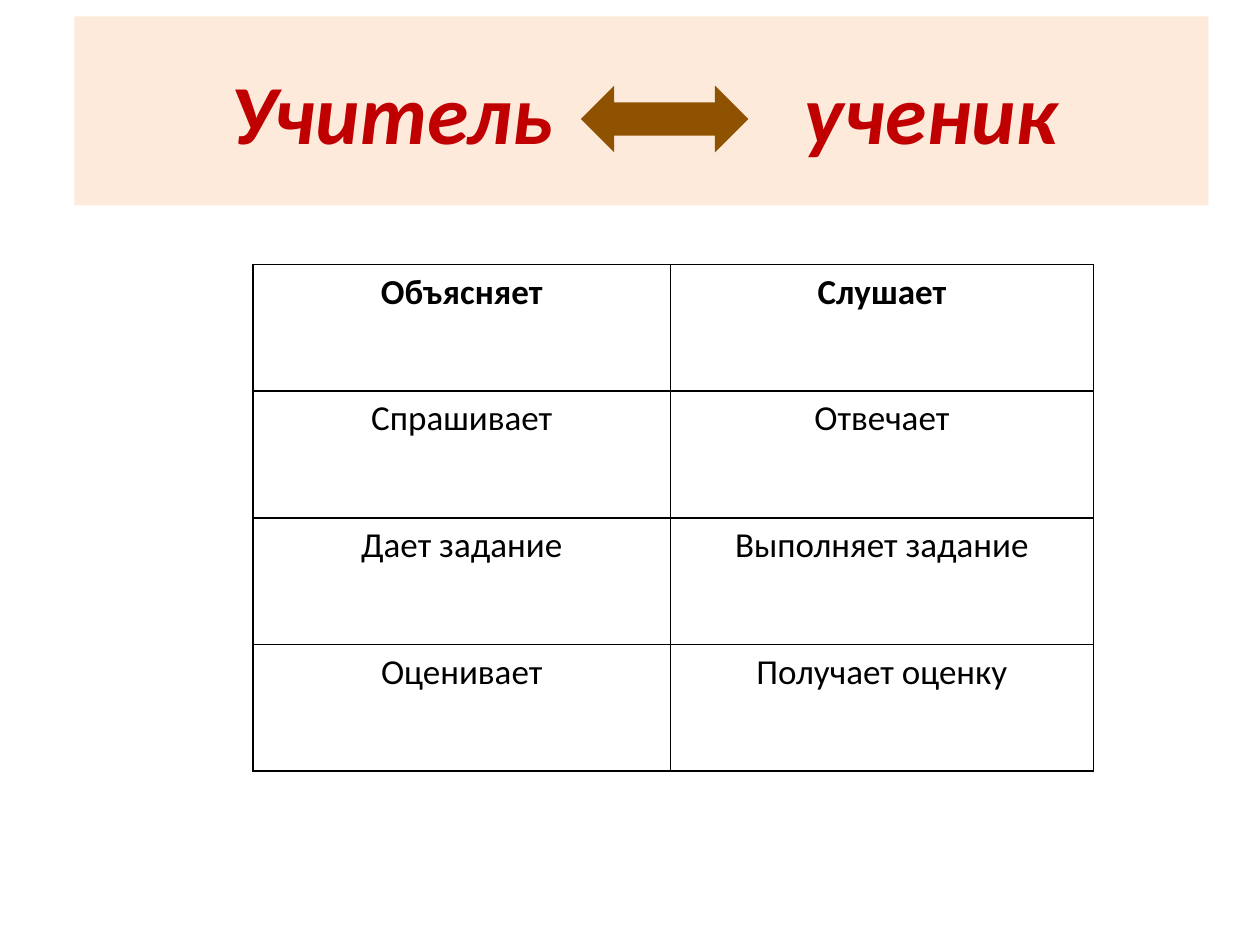
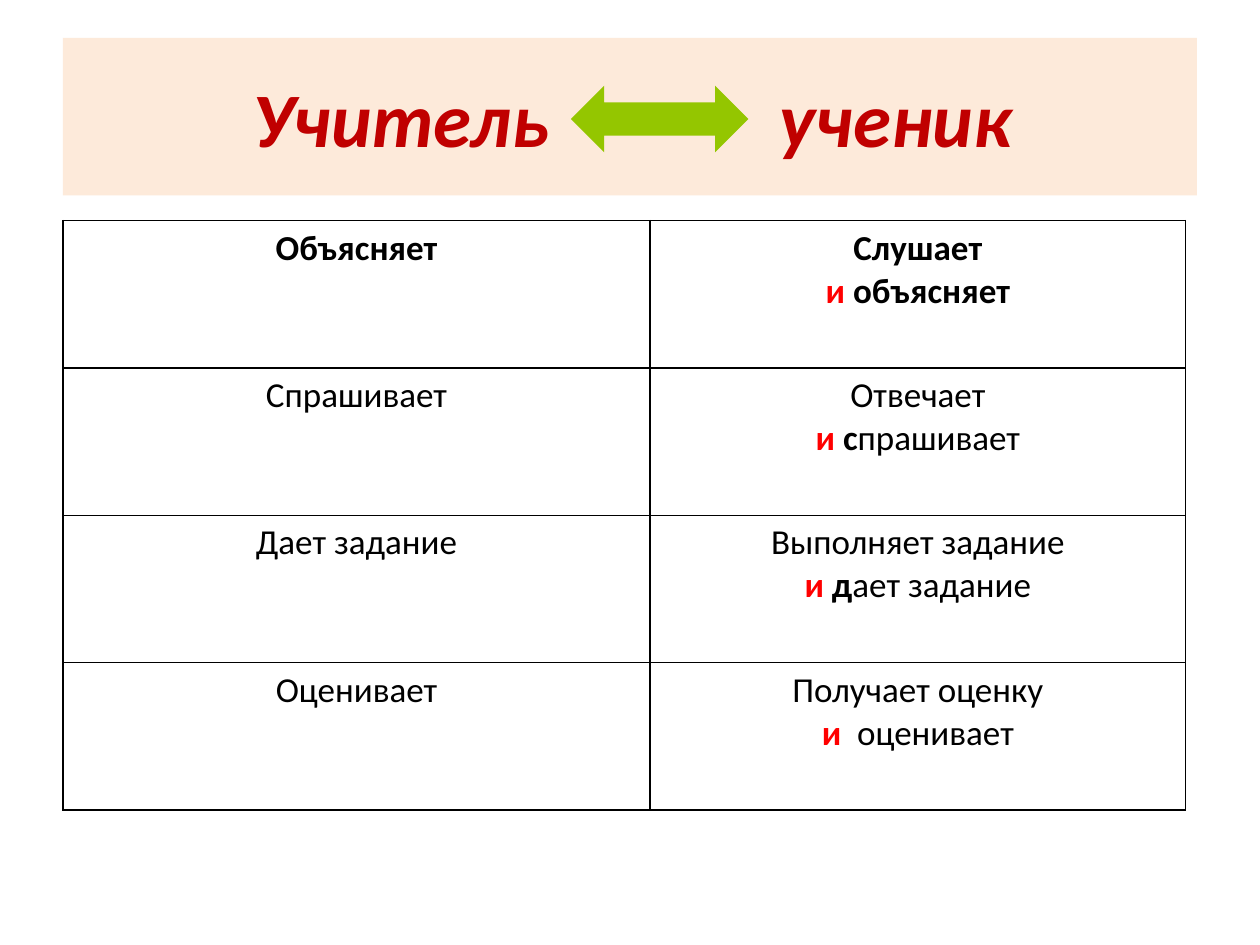
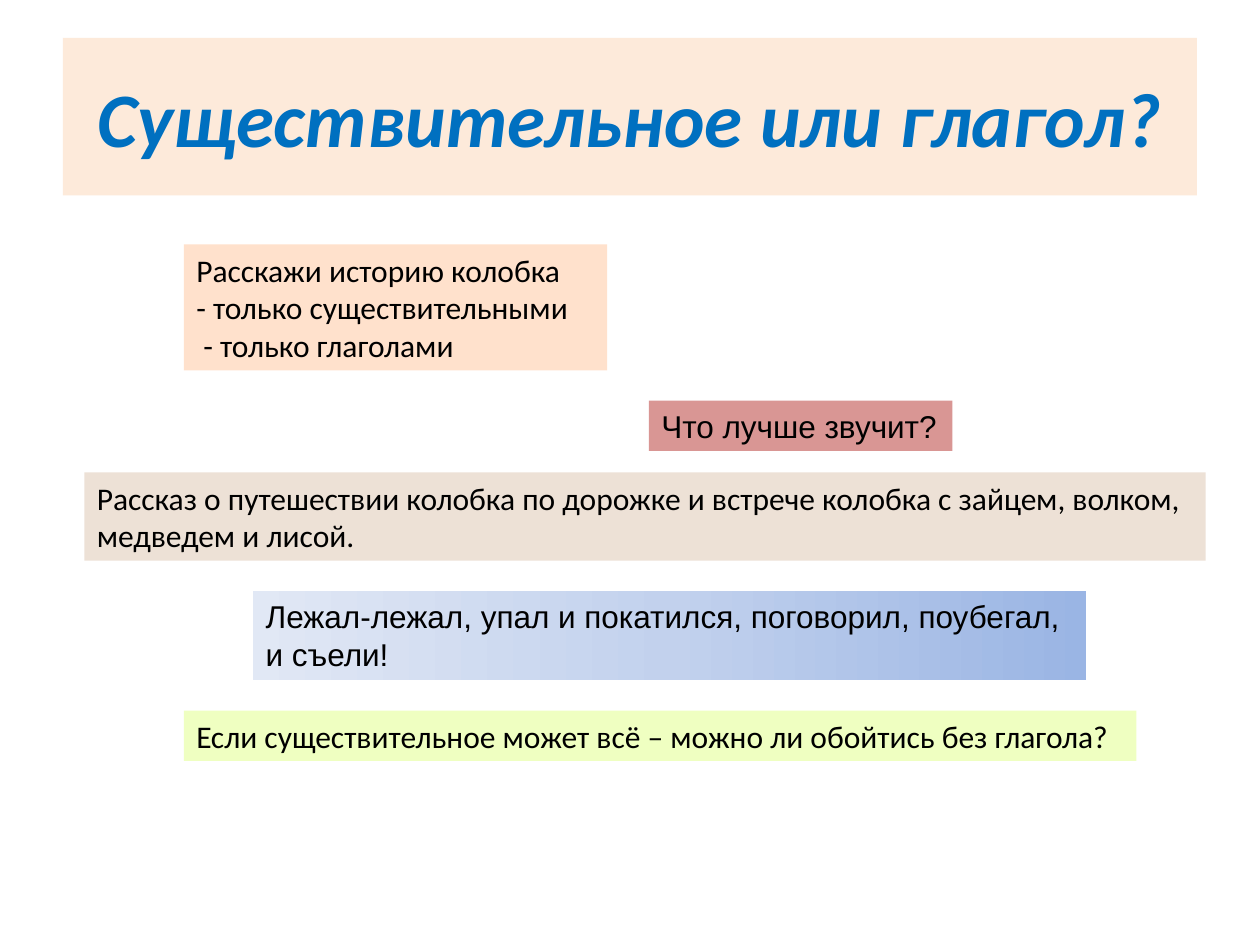
from copy import deepcopy

from lxml import etree
from pptx import Presentation
from pptx.dml.color import RGBColor
from pptx.enum.shapes import MSO_SHAPE
from pptx.enum.text import MSO_ANCHOR, PP_ALIGN
from pptx.oxml.ns import qn
from pptx.util import Inches, Pt

BAND, RED, BLUE, BLACK, ACCENT = "FDEADA", "C00000", "0070C0", "000000", "FF0000"

TEACHER = ["Объясняет", "Спрашивает", "Дает задание", "Оценивает"]
STUDENT = ["Слушает", "Отвечает", "Выполняет задание", "Получает оценку"]

AND = ("и", {"color": ACCENT, "bold": True})
AND_SPACED = ("и ", {"color": ACCENT, "bold": True})
BOLD = {"bold": True}
STUDENT_TOO = [
    [AND, (" объясняет", BOLD)],
    [AND, (" с", BOLD), ("прашивает", {})],
    [AND, (" д", BOLD), ("ает задание", {})],
    [AND_SPACED, (" оценивает", {})],
]

ROLE_SLIDES = [
    {
        "band": (0.59, 0.13, 9, 1.5), "size": 48,
        "arrow": (4.61, 0.68, 1.33, 0.53), "arrow_color": "8F5201",
        "table": (2.01, 2.1, 6.67, 4.02), "columns": (3.31, 3.36),
        "rows": [([teacher], [student]) for teacher, student in zip(TEACHER, STUDENT)],
    },
    {
        "band": (0.5, 0.3, 9, 1.25), "size": 44,
        "arrow": (4.53, 0.68, 1.41, 0.53), "arrow_color": "94C600",
        "table": (0.5, 1.75, 8.91, 4.68), "columns": (4.66, 4.25),
        "rows": [([teacher], [student, too])
                 for teacher, student, too in zip(TEACHER, STUDENT, STUDENT_TOO)],
    },
]

STORY_TITLE = "Существительное или глагол?"
STORY_NOTES = [
    ((1.46, 1.94, 3.36, 1), "FFE1CC", "Calibri",
     ["Расскажи историю колобка", "- только существительными", " - только глаголами"]),
    ((5.15, 3.18, 2.41, 0.4), "D99694", "Arial", ["Что лучше звучит?"]),
    ((0.67, 3.75, 8.9, 0.7), "EDE1D6", "Calibri",
     ["Рассказ о путешествии колобка по дорожке и встрече колобка с зайцем, волком,",
      "медведем и лисой."]),
    ((2.01, 4.69, 6.61, 0.71), ("9AB5E4", "C2D1ED", "E1E8F5"), "Arial",
     ["Лежал-лежал, упал и покатился, поговорил, поубегал,", "и съели!"]),
    ((1.46, 5.64, 7.56, 0.4), "EFFFC1", "Calibri",
     ["Если существительное может всё – можно ли обойтись без глагола?"]),
]


def rgb(color):
    return RGBColor.from_string(color)


def write(frame, lines, size=18, font="Calibri", color=BLACK, bold=False, italic=False,
          align=PP_ALIGN.LEFT):
    """Each line is a string or a list of (text, format changes)."""
    frame.word_wrap = True
    for index, line in enumerate(lines):
        para = frame.add_paragraph() if index else frame.paragraphs[0]
        para.alignment = align
        for text, changes in [(line, {})] if isinstance(line, str) else line:
            span = para.add_run()
            span.text = text
            span.font.name, span.font.size = font, Pt(size)
            span.font.bold = changes.get("bold", bold)
            span.font.italic = italic
            span.font.color.rgb = rgb(changes.get("color", color))


def fill_gradient(box, colors):
    box.fill.gradient()
    box.fill.gradient_angle = 180
    stops = box._element.spPr.find(".//" + qn("a:gsLst"))
    stops.insert(1, deepcopy(stops[0]))
    for index, (stop, color) in enumerate(zip(box.fill.gradient_stops, colors)):
        stop.position = index / (len(colors) - 1)
        stop.color.rgb = rgb(color)


def add_box(page, place, fill, kind=MSO_SHAPE.RECTANGLE):
    box = page.shapes.add_shape(kind, *map(Inches, place))
    box.shadow.inherit = False
    box.line.fill.background()
    if isinstance(fill, str):
        box.fill.solid()
        box.fill.fore_color.rgb = rgb(fill)
    else:
        fill_gradient(box, fill)
    box.text_frame.vertical_anchor = MSO_ANCHOR.TOP
    return box


def add_title(page, place, text, size, color, align=PP_ALIGN.CENTER):
    frame = add_box(page, place, BAND).text_frame
    frame.vertical_anchor = MSO_ANCHOR.MIDDLE
    write(frame, [text], size=size, color=color, bold=True, italic=True, align=align)
    return frame


def add_role_title(page, place, size):
    """Centre the two words in the band, with a tab that leaves room for the arrow."""
    frame = add_title(page, place, "Учитель\tученик", size, RED, align=PP_ALIGN.LEFT)
    frame.margin_left = Inches((place[2] - size * 0.136) / 2)
    properties = frame.paragraphs[0]._p.get_or_add_pPr()
    tabs = etree.SubElement(properties, qn("a:tabLst"))
    etree.SubElement(tabs, qn("a:tab"), pos=str(Inches(size * 0.095)), algn="l")


def add_borders(cell):
    properties = cell._tc.get_or_add_tcPr()
    for index, side in enumerate(("lnL", "lnR", "lnT", "lnB")):
        line = etree.Element(qn("a:" + side), w=str(Pt(1)))
        solid = etree.SubElement(line, qn("a:solidFill"))
        etree.SubElement(solid, qn("a:srgbClr"), val=BLACK)
        properties.insert(index, line)


def add_role_table(page, place, columns, rows):
    table = page.shapes.add_table(len(rows), len(columns), *map(Inches, place)).table
    table.first_row = table.horz_banding = False
    for column, width in zip(table.columns, columns):
        column.width = Inches(width)
    for row_index, row in enumerate(rows):
        table.rows[row_index].height = Inches(place[3] / len(rows))
        for column_index, lines in enumerate(row):
            cell = table.cell(row_index, column_index)
            cell.fill.background()
            add_borders(cell)
            write(cell.text_frame, lines, size=20, bold=row_index == 0,
                  align=PP_ALIGN.CENTER)


def main():
    deck = Presentation()
    deck.slide_width, deck.slide_height = Inches(10), Inches(7.5)
    blank = deck.slide_layouts[6]

    for roles in ROLE_SLIDES:
        page = deck.slides.add_slide(blank)
        add_role_title(page, roles["band"], roles["size"])
        add_box(page, roles["arrow"], roles["arrow_color"], MSO_SHAPE.LEFT_RIGHT_ARROW)
        add_role_table(page, roles["table"], roles["columns"], roles["rows"])

    page = deck.slides.add_slide(blank)
    add_title(page, ROLE_SLIDES[1]["band"], STORY_TITLE, 44, BLUE)
    for place, fill, font, lines in STORY_NOTES:
        write(add_box(page, place, fill).text_frame, lines, font=font)

    deck.save("out.pptx")


if __name__ == "__main__":
    main()
